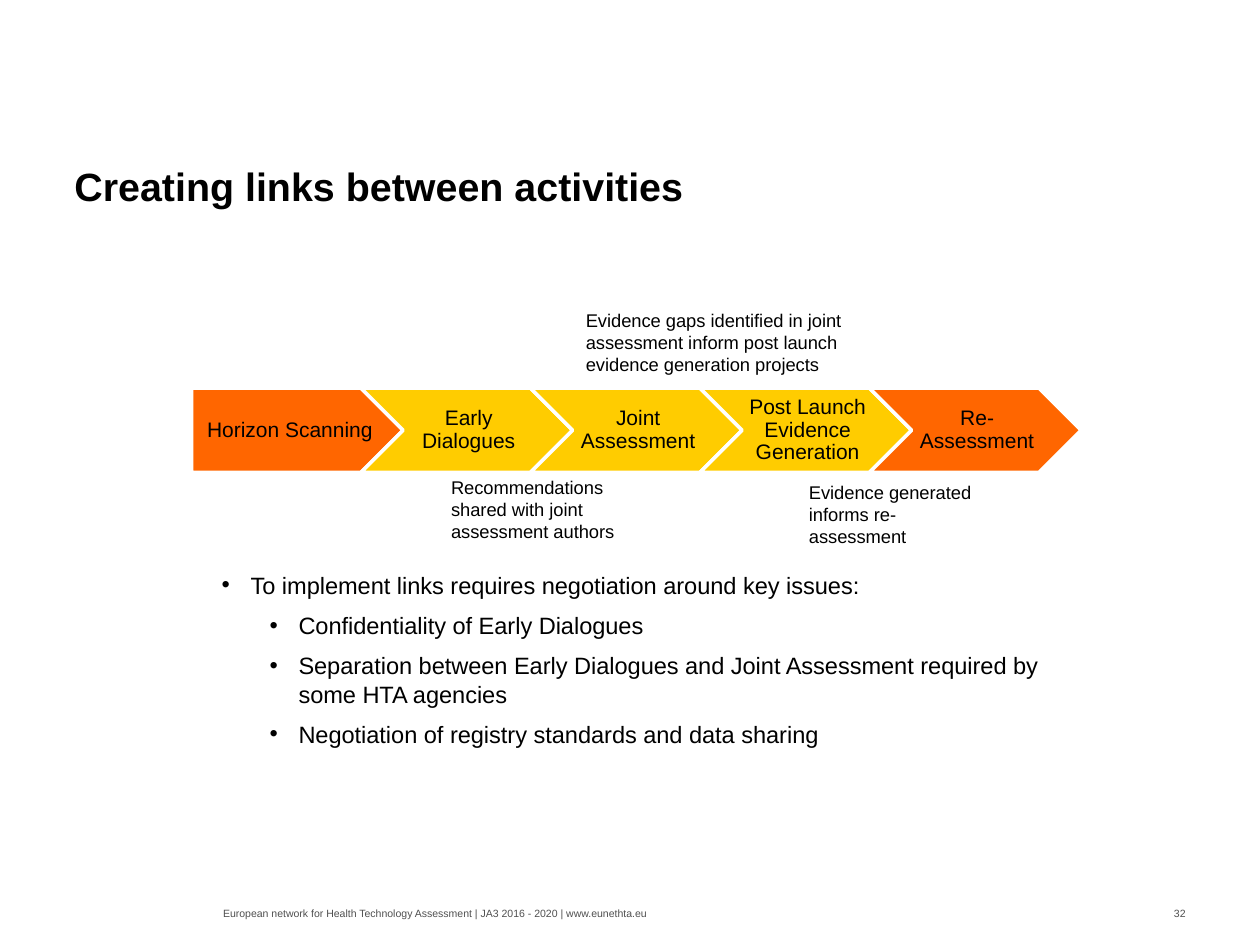
from lxml import etree
from pptx import Presentation
from pptx.dml.color import RGBColor
from pptx.enum.shapes import MSO_SHAPE
from pptx.enum.text import MSO_ANCHOR, MSO_AUTO_SIZE, PP_ALIGN
from pptx.oxml.ns import qn
from pptx.util import Inches, Pt

LEFT, MID, RIGHT = PP_ALIGN.LEFT, PP_ALIGN.CENTER, PP_ALIGN.RIGHT
TOP, CENTRE, BASE = MSO_ANCHOR.TOP, MSO_ANCHOR.MIDDLE, MSO_ANCHOR.BOTTOM
PLATE, ARROW = MSO_SHAPE.PENTAGON, MSO_SHAPE.CHEVRON
FIXED = MSO_AUTO_SIZE.NONE
WIDE, HIGH = 10, 7.5
COLS, ROWS = 100, 75
HUES = {"ink": "000000", "grey": "505050", "edge": "FFFFFF",
        "outer": "FF6600", "core": "FFCC00"}


class Deck:
    """Holds the style and the slide, and adds each kind of element."""

    def __init__(self):
        self.font = "Arial"
        self.prs = Presentation()
        self.prs.slide_width, self.prs.slide_height = Inches(WIDE), Inches(HIGH)
        self.slide = self.prs.slides.add_slide(self.prs.slide_layouts[5])

    def hue(self, name):
        return RGBColor.from_string(HUES[name])

    def place(self, col, row, wide, high):
        unit_x, unit_y = WIDE / COLS, HIGH / ROWS
        return (Inches(col * unit_x), Inches(row * unit_y),
                Inches(wide * unit_x), Inches(high * unit_y))

    def frame(self, shape, anchor=TOP, pads=(0, 0, 0, 0)):
        frame = shape.text_frame
        frame.word_wrap, frame.auto_size = True, FIXED
        frame.vertical_anchor = anchor
        (frame.margin_left, frame.margin_top,
         frame.margin_right, frame.margin_bottom) = map(Inches, pads)
        return frame

    def style(self, para, size, hue="ink", align=LEFT, bold=False, lead=None):
        para.alignment = align
        para.space_before = Pt(0)
        if lead:
            para.line_spacing = lead
        for run in para.runs:
            run.font.name, run.font.size = self.font, Pt(size)
            run.font.bold, run.font.color.rgb = bold, self.hue(hue)

    def title(self, text, *spot):
        shape = self.slide.shapes.title
        shape.left, shape.top, shape.width, shape.height = self.place(*spot)
        frame = self.frame(shape, BASE)
        frame.text = text
        self.style(frame.paragraphs[0], 22.5, bold=True, lead=0.95)

    def text(self, text, spot, size, hue="ink", align=LEFT):
        frame = self.frame(self.slide.shapes.add_textbox(*self.place(*spot)))
        frame.text = text
        self.style(frame.paragraphs[0], size, hue, align)

    def step(self, kind, text, hue, pad, *spot):
        shape = self.slide.shapes.add_shape(kind, *self.place(*spot))
        shape.shadow.inherit = False
        shape.fill.solid()
        shape.fill.fore_color.rgb = self.hue(hue)
        shape.line.color.rgb, shape.line.width = self.hue("edge"), Pt(2)
        frame = self.frame(shape, CENTRE, (pad, 0.04, 0.02, 0.04))
        frame.text = text
        self.style(frame.paragraphs[0], 12, align=MID, lead=0.9)

    def points(self, items, spot, size):
        frame = self.frame(self.slide.shapes.add_textbox(*self.place(*spot)))
        for i, (level, text) in enumerate(items):
            para = frame.paragraphs[0] if i == 0 else frame.add_paragraph()
            para.text, para.level = text, level
            props = para._p.get_or_add_pPr()
            props.set("marL", str(Inches(0.23 + 0.38 * level)))
            props.set("indent", str(Inches(-0.23)))
            etree.SubElement(props, qn("a:buFont")).set("typeface", self.font)
            etree.SubElement(props, qn("a:buChar")).set("char", "•")
            self.style(para, size)
            if i:
                para.space_before = Pt(6.8)


def main():
    deck = Deck()
    deck.title("Creating links between activities", 5.9, 6.4, 88.2, 10.3)
    steps = [("Horizon Scanning", "outer"), ("Early Dialogues", "core"),
             ("Joint Assessment", "core"),
             ("Post Launch Evidence Generation", "core"),
             ("Re-Assessment", "outer")]
    for i, (name, hue) in enumerate(steps):
        kind, pad = (ARROW, 0.05) if i else (PLATE, 0.07)
        deck.step(kind, name, hue, pad, 15.2 + 13.45 * i, 30.8, 16.8, 6.7)
    notes = [
        ("Recommendations shared with joint assessment authors", 35.8, 37.8, 14.2),
        ("Evidence gaps identified in joint assessment inform post launch "
         "evidence generation projects", 46.5, 24.5, 21.4),
        ("Evidence generated informs re-assessment", 64.2, 38.2, 14.2)]
    for text, col, row, wide in notes:
        deck.text(text, (col, row, wide, 5.3), 10.5)
    deck.points([
        (0, "To implement links requires negotiation around key issues:"),
        (1, "Confidentiality of Early Dialogues"),
        (1, "Separation between Early Dialogues and Joint Assessment "
            "required by some HTA agencies"),
        (1, "Negotiation of registry standards and data sharing"),
    ], (17.6, 45.3, 65, 17.6), 13.5)
    deck.text("European network for Health Technology Assessment | "
              "JA3 2016 - 2020 | www.eunethta.eu",
              (17.7, 72, 46.9, 1), 6, "grey")
    deck.text("32", (87.4, 72, 6.7, 1.3), 6, "grey", RIGHT)
    deck.prs.save("out.pptx")


if __name__ == "__main__":
    main()
